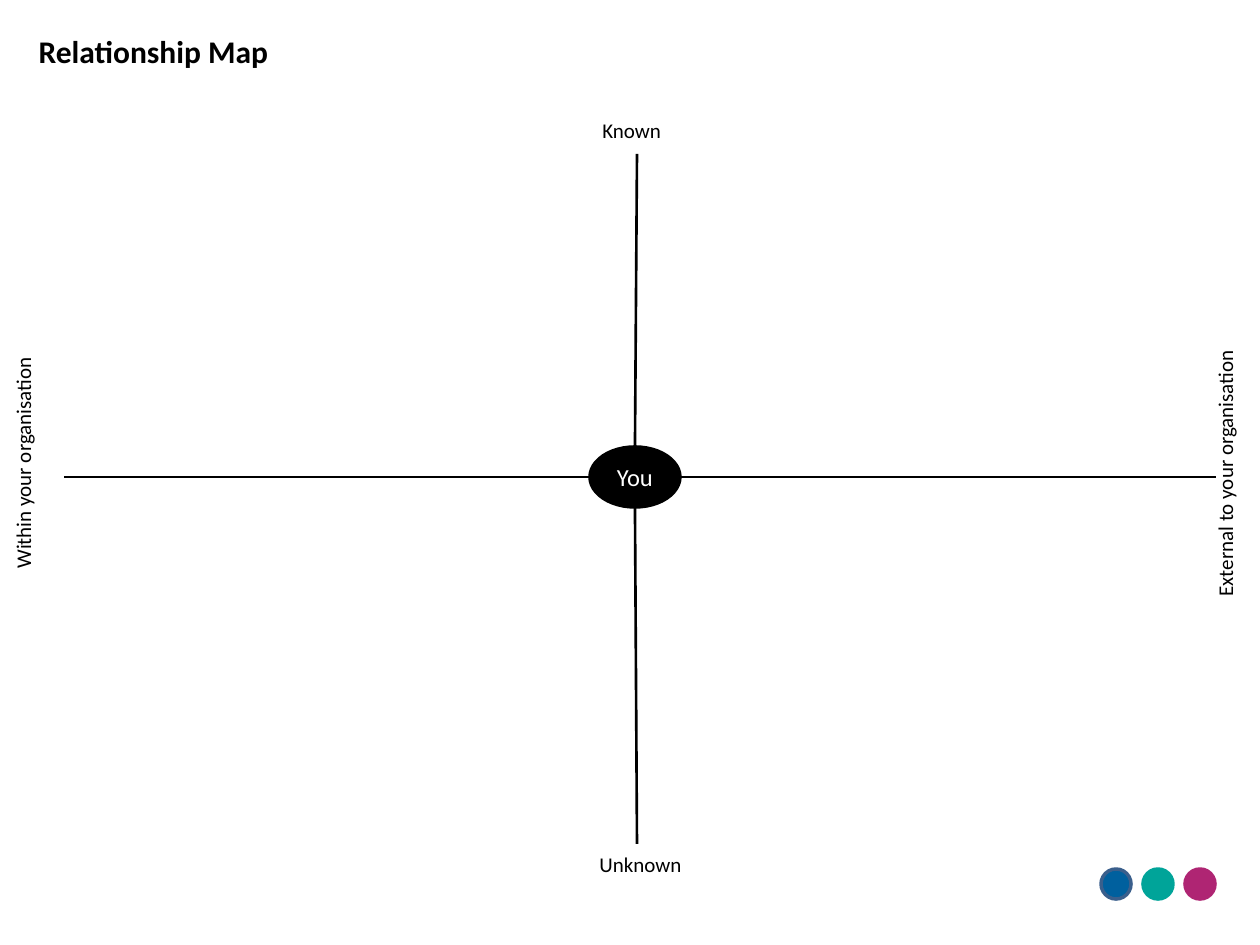
from dataclasses import dataclass

from lxml import etree
from pptx import Presentation
from pptx import util as u
from pptx.dml.color import RGBColor
from pptx.enum import shapes, text
from pptx.oxml.ns import qn


@dataclass(frozen=True)
class Theme:
    font: str = "Calibri"
    ink: str = "000000"
    paper: str = "FFFFFF"
    # (fill, outline) from left to right
    dots: tuple = (("00609E", "3A5F8C"), ("00A499", "00A499"), ("AF2573", "AF2573"))
    title_size: int = 18
    centre_size: int = 14
    label_size: int = 12
    axis_width: float = 1.5
    outline_width: float = 2


THEME = Theme()
SLIDE_W, SLIDE_H = 1260, 945


def px(*lengths):
    """Turn px into EMU, at 126 px to the inch."""
    return [u.Emu(round(length * 914400 / 126)) for length in lengths]


def add_run(paragraph, words, size, color, bold=False):
    run = paragraph.add_run()
    run.text = words
    run.font.name = THEME.font
    run.font.size = u.Pt(size)
    run.font.bold = bold
    run.font.color.rgb = RGBColor.from_string(color)


def add_oval(slide, box, fill, outline):
    oval = slide.shapes.add_shape(shapes.MSO_SHAPE.OVAL, *px(*box))
    oval.shadow.inherit = False
    oval.fill.solid()
    oval.fill.fore_color.rgb = RGBColor.from_string(fill)
    oval.line.color.rgb = RGBColor.from_string(outline)
    oval.line.width = u.Pt(THEME.outline_width)
    return oval


def add_axis(slide, start, end):
    axis = slide.shapes.add_connector(
        shapes.MSO_CONNECTOR.STRAIGHT, *px(*start, *end))
    axis.line.color.rgb = RGBColor.from_string(THEME.ink)
    axis.line.width = u.Pt(THEME.axis_width)
    etree.SubElement(axis.line._get_or_add_ln().getparent(), qn("a:effectLst"))


def add_label(slide, box, words, upright=False):
    label = slide.shapes.add_textbox(*px(*box))
    frame = label.text_frame
    frame.word_wrap = True
    frame.auto_size = text.MSO_AUTO_SIZE.SHAPE_TO_FIT_TEXT
    if upright:
        frame._txBody.bodyPr.set("vert", "vert270")
    add_run(frame.paragraphs[0], words, THEME.label_size, THEME.ink)


def draw_title(slide, box):
    title = slide.shapes.title
    title.left, title.top, title.width, title.height = px(*box)
    frame = title.text_frame
    frame.word_wrap = False
    frame.auto_size = text.MSO_AUTO_SIZE.SHAPE_TO_FIT_TEXT
    frame.vertical_anchor = text.MSO_ANCHOR.TOP
    heading = frame.paragraphs[0]
    heading.alignment = text.PP_ALIGN.LEFT
    add_run(heading, "Relationship Map", THEME.title_size, THEME.ink, bold=True)


def draw_dots(slide, box):
    """Spread the dots evenly over the box, each as wide as the box is high."""
    left, top, width, size = box
    pitch = (width - size) / (len(THEME.dots) - 1)
    for index, (fill, outline) in enumerate(THEME.dots):
        add_oval(slide, (left + index * pitch, top, size, size), fill, outline)


def draw_map(slide, box):
    """Four axes from a central oval to the sides of the box, with end labels."""
    left, top, width, height = box
    right, bottom = left + width, top + height
    oval_w, oval_h = 90, 60
    centre_x, centre_y = left + 571, top + 323
    oval_left, oval_top = centre_x - oval_w // 2, centre_y - oval_h // 2
    lean = 2  # the outer ends of the vertical axes sit slightly to the right

    # Centre
    you = add_oval(slide, (oval_left, oval_top, oval_w, oval_h), THEME.ink, THEME.ink)
    you.text_frame.vertical_anchor = text.MSO_ANCHOR.MIDDLE
    name = you.text_frame.paragraphs[0]
    name.alignment = text.PP_ALIGN.CENTER
    add_run(name, "You", THEME.centre_size, THEME.paper)

    # Axes
    for start, end in (
        ((oval_left, centre_y), (left, centre_y)),
        ((oval_left + oval_w, centre_y), (right, centre_y)),
        ((centre_x, oval_top), (centre_x + lean, top)),
        ((centre_x, oval_top + oval_h), (centre_x + lean, bottom)),
    ):
        add_axis(slide, start, end)

    # Axis labels
    add_label(slide, (left - 60, top + 146, 50, 281), "Within your organisation", True)
    add_label(slide, (oval_left, top - 43, 189, 38), "Known")
    add_label(slide, (right - 10, top + 180, 50, 275), "External to your organisation", True)
    add_label(slide, (oval_left - 3, bottom + 1, 289, 38), "Unknown")


def main():
    deck = Presentation()
    deck.slide_width, deck.slide_height = px(SLIDE_W, SLIDE_H)
    slide = deck.slides.add_slide(deck.slide_layouts.get_by_name("Title Only"))
    draw_dots(slide, (1101, 869, 114, 30))
    draw_map(slide, (64, 154, 1152, 690))
    draw_title(slide, (26, 26, 257, 50))
    deck.save("out.pptx")


if __name__ == "__main__":
    main()
